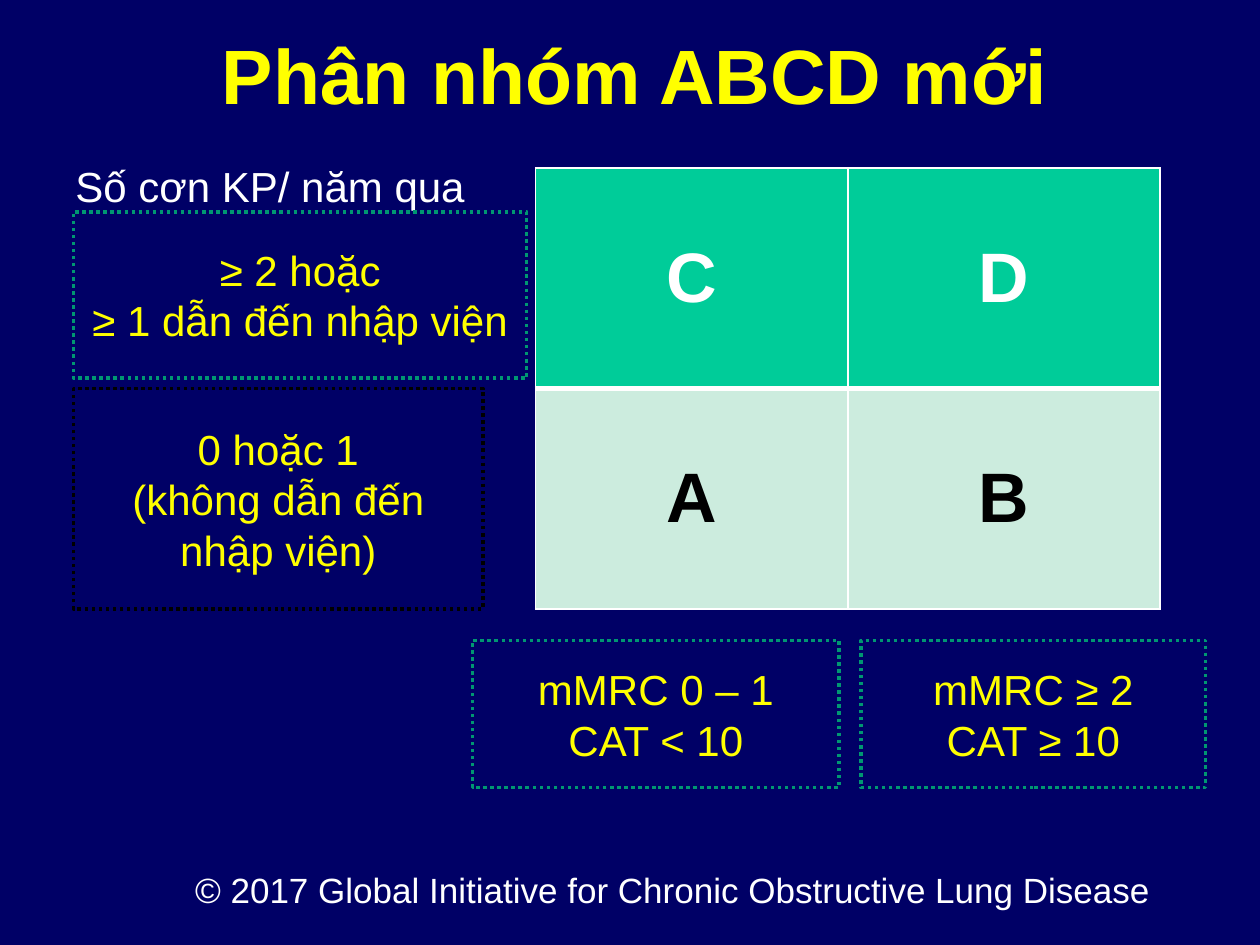
from dataclasses import dataclass

from lxml.etree import SubElement
from pptx import Presentation
from pptx.dml.color import RGBColor
from pptx.enum.dml import MSO_LINE
from pptx.enum.shapes import MSO_SHAPE
from pptx.enum.text import MSO_ANCHOR, PP_ALIGN
from pptx.oxml import parse_xml
from pptx.oxml.ns import nsdecls, qn
from pptx.util import Pt


@dataclass(frozen=True)
class Theme:
    font: str = "Arial"
    background: str = "000066"
    accent: str = "FFFF00"
    white: str = "FFFFFF"
    black: str = "000000"
    frame: str = "009771"
    high_risk: str = "00CC99"
    low_risk: str = "CCECDE"
    title_size: int = 44
    group_size: int = 40
    body_size: int = 24
    footer_size: int = 20


THEME = Theme()


def rgb(color):
    return RGBColor.from_string(color)


def write(tf, lines, size, color, bold=False, align=PP_ALIGN.CENTER):
    """Write one paragraph per line in a single style."""
    tf.word_wrap = True
    for i, line in enumerate(lines):
        p = tf.add_paragraph() if i else tf.paragraphs[0]
        p.text = line
        p.alignment = align
        p.font.name = THEME.font
        p.font.size = Pt(size)
        p.font.bold = bold
        p.font.color.rgb = rgb(color)


def add_text_shadow(tf):
    for p in tf.paragraphs:
        for r in p.runs:
            r.font.color.rgb = p.font.color.rgb
            r.font.size = p.font.size
            fill = r.font._element.find(qn("a:solidFill"))
            fill.addnext(parse_xml(
                f'<a:effectLst {nsdecls("a")}><a:outerShdw blurRad="38100" '
                'dist="38100" dir="2700000" algn="tl"><a:srgbClr val="000000"/>'
                '</a:outerShdw></a:effectLst>'))


def add_label(s, box, text, size, color, bold=False, align=PP_ALIGN.CENTER,
              anchor=MSO_ANCHOR.TOP):
    tf = s.shapes.add_textbox(*map(Pt, box)).text_frame
    tf.vertical_anchor = anchor
    write(tf, [text], size, color, bold, align)
    return tf


def add_criterion(s, box, lines, line_color):
    """Dotted frame holding the criterion for one row or column."""
    sp = s.shapes.add_shape(MSO_SHAPE.RECTANGLE, *map(Pt, box))
    sp.shadow.inherit = False
    sp.fill.background()
    sp.line.color.rgb = rgb(line_color)
    sp.line.width = Pt(2)
    sp.line.dash_style = MSO_LINE.ROUND_DOT
    sp.text_frame.vertical_anchor = MSO_ANCHOR.MIDDLE
    write(sp.text_frame, lines, THEME.body_size, THEME.accent)


def set_borders(cell, widths):
    tc_pr = cell._tc.get_or_add_tcPr()
    for i, (side, width) in enumerate(widths.items()):
        ln = parse_xml(f'<a:ln{side} {nsdecls("a")} w="{Pt(width)}"/>')
        fill = SubElement(ln, qn("a:solidFill"))
        SubElement(fill, qn("a:srgbClr"), val=THEME.white)
        tc_pr.insert(i, ln)


def add_group_table(s, box):
    left, top, width, height = box
    rows = [("CD", THEME.high_risk, THEME.white),
            ("AB", THEME.low_risk, THEME.black)]
    table = s.shapes.add_table(2, 2, *map(Pt, box)).table
    table.first_row = table.horz_banding = False
    for column in table.columns:
        column.width = Pt(width / 2)
    for i, (groups, fill, color) in enumerate(rows):
        table.rows[i].height = Pt(height / 2)
        for j, group in enumerate(groups):
            cell = table.cell(i, j)
            cell.fill.solid()
            cell.fill.fore_color.rgb = rgb(fill)
            cell.vertical_anchor = MSO_ANCHOR.MIDDLE
            write(cell.text_frame, [group], THEME.group_size, color, bold=True)
            # A thick rule separates the two rows
            set_borders(cell, {"L": 1, "R": 1, "T": 3 if i else 1,
                               "B": 1 if i else 3})


def build_group_slide(s, box):
    x, y, width, height = box
    s.background.fill.solid()
    s.background.fill.fore_color.rgb = rgb(THEME.background)

    # Title and row heading
    title = add_label(s, (x + 34, y + 6, 658, 72), "Phân nhóm ABCD mới",
                      THEME.title_size, THEME.accent, bold=True,
                      anchor=MSO_ANCHOR.MIDDLE)
    heading = add_label(s, (x + 36, y + 88, 340, 36), "Số cơn KP/ năm qua",
                        THEME.body_size, THEME.white, align=PP_ALIGN.LEFT)
    for tf in (title, heading):
        add_text_shadow(tf)

    # Exacerbation criteria beside the rows
    add_criterion(s, (x + 42, y + 121, 259, 95),
                  ["≥ 2 hoặc", "≥ 1 dẫn đến nhập viện"], THEME.frame)
    add_criterion(s, (x + 42, y + 222, 234, 126),
                  ["0 hoặc 1", "(không dẫn đến nhập viện)"], THEME.black)

    # ABCD groups
    add_group_table(s, (x + 306, y + 96, 357, 252))

    # Symptom criteria below the columns
    add_criterion(s, (x + 270, y + 366, 209.5, 84),
                  ["mMRC 0 – 1", "CAT < 10"], THEME.frame)
    add_criterion(s, (x + 492, y + 366, 197, 84),
                  ["mMRC ≥ 2", "CAT ≥ 10"], THEME.frame)

    # Copyright line
    add_label(s, (x + 97, y + height - 47, 575, 32),
              "© 2017 Global Initiative for Chronic Obstructive Lung Disease",
              THEME.footer_size, THEME.white)


def main():
    prs = Presentation()
    prs.slide_width, prs.slide_height = Pt(720), Pt(540)
    s = prs.slides.add_slide(prs.slide_layouts[6])
    build_group_slide(s, (0, 0, 720, 540))
    prs.save("out.pptx")


if __name__ == "__main__":
    main()
